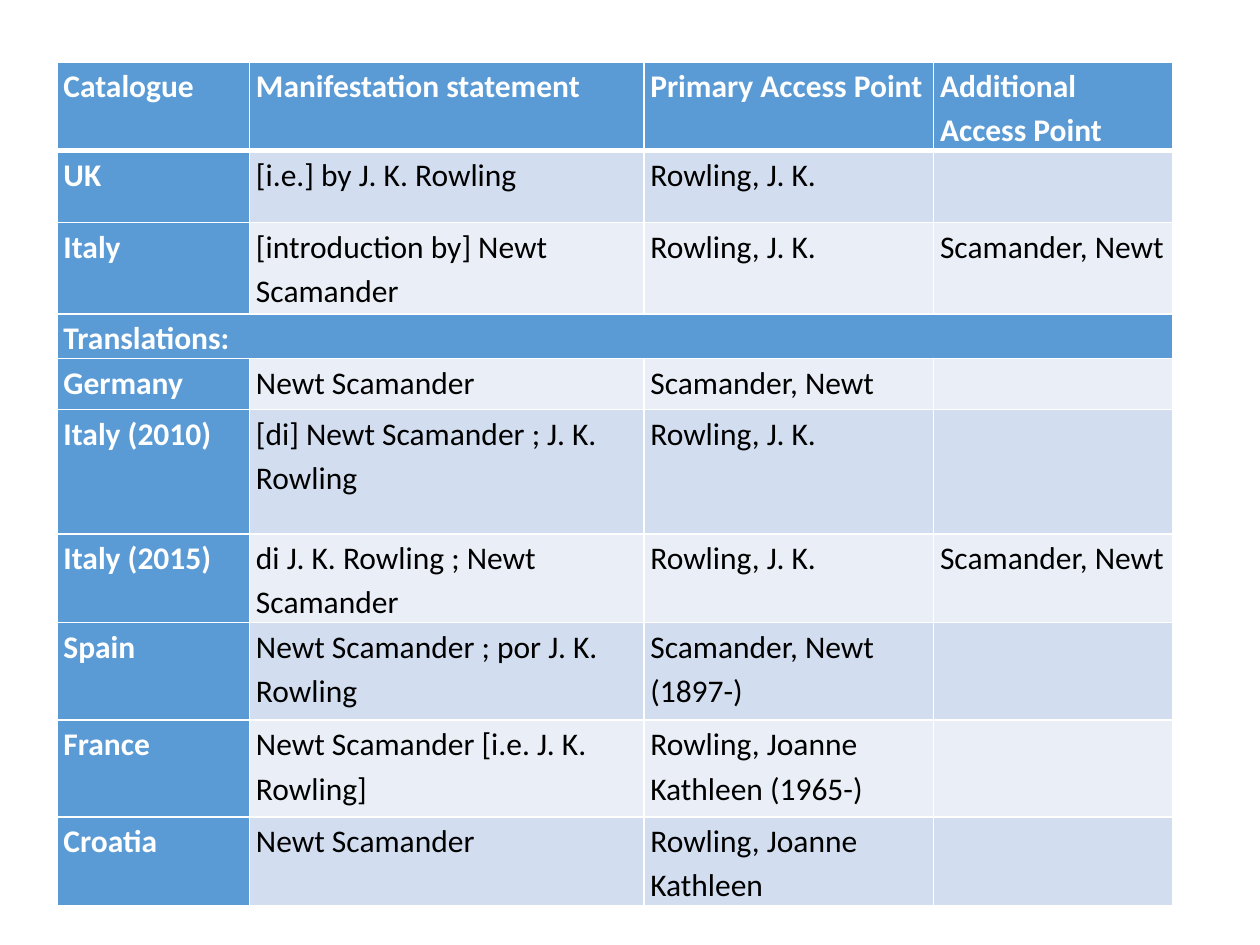
"""Build a slide with a table of catalogue access points."""
import pptx
import pptx.dml.color
import pptx.oxml
import pptx.oxml.ns
import pptx.util

Cm, Pt = pptx.util.Cm, pptx.util.Pt

ROWS = [
    ("Catalogue", "Manifestation statement", "Primary Access Point", "Additional Access Point"),
    ("UK", "[i.e.] by J. K. Rowling", "Rowling, J. K.", ""),
    ("Italy", "[introduction by] Newt Scamander", "Rowling, J. K.", "Scamander, Newt"),
    ("Translations:",),
    ("Germany", "Newt Scamander", "Scamander, Newt", ""),
    ("Italy (2010)", "[di] Newt Scamander ; J. K. Rowling", "Rowling, J. K.", ""),
    ("Italy (2015)", "di J. K. Rowling ; Newt Scamander", "Rowling, J. K.", "Scamander, Newt"),
    ("Spain", "Newt Scamander ; por J. K. Rowling", "Scamander, Newt (1897-)", ""),
    ("France", "Newt Scamander [i.e. J. K. Rowling]", "Rowling, Joanne Kathleen (1965-)", ""),
    ("Croatia", "Newt Scamander", "Rowling, Joanne Kathleen", ""),
]
WIDTHS = [3.88, 7.95, 5.84, 4.83]
HEIGHTS = [1.65, 1.45, 1.85, 0.82, 1.03, 2.51, 1.65, 1.97, 1.95, 1.65]
LEFT, TOP = 1.15, 1.25
THEME = {
    "font": "Calibri", "size": 18, "spacing": 1.15, "inset": 0.13,
    "head": "5B9BD5", "bands": ("EAEFF7", "D2DEEF"),
    "light": "FFFFFF", "dark": "000000", "rule": 1, "thick": 3,
}


def color(name):
    return pptx.dml.color.RGBColor.from_string(name)


def border(cell, row):
    props = cell._tc.get_or_add_tcPr()
    for side in "LRTB":
        thick = (row, side) in ((0, "B"), (1, "T"))
        width = Pt(THEME["thick" if thick else "rule"])
        props.append(pptx.oxml.parse_xml(
            f'<a:ln{side} {pptx.oxml.ns.nsdecls("a")} w="{width}"><a:solidFill>'
            f'<a:srgbClr val="{THEME["light"]}"/></a:solidFill></a:ln{side}>'))


def style(cell, text, row, col):
    head = row == 0 or col == 0
    border(cell, row)
    cell.fill.solid()
    cell.fill.fore_color.rgb = color(THEME["head"] if head else THEME["bands"][row % 2])
    cell.margin_left = cell.margin_right = Cm(THEME["inset"])
    cell.margin_top = cell.margin_bottom = 0
    cell.text = text
    para = cell.text_frame.paragraphs[0]
    para.line_spacing = THEME["spacing"]
    para.font.name = THEME["font"]
    para.font.size = Pt(THEME["size"])
    para.font.bold = head
    para.font.color.rgb = color(THEME["light" if head else "dark"])


deck = pptx.Presentation()
deck.slide_width, deck.slide_height = Cm(25.4), Cm(19.05)
slide = deck.slides.add_slide(deck.slide_layouts[6])
table = slide.shapes.add_table(
    len(ROWS), len(WIDTHS), Cm(LEFT), Cm(TOP), Cm(sum(WIDTHS)), Cm(sum(HEIGHTS))).table
table.first_col = True
for column, width in zip(table.columns, WIDTHS):
    column.width = Cm(width)
for row, (texts, height) in enumerate(zip(ROWS, HEIGHTS)):
    table.rows[row].height = Cm(height)
    if len(texts) == 1:
        table.cell(row, 0).merge(table.cell(row, len(WIDTHS) - 1))
    for col, text in enumerate(texts):
        style(table.cell(row, col), text, row, col)
deck.save("out.pptx")
